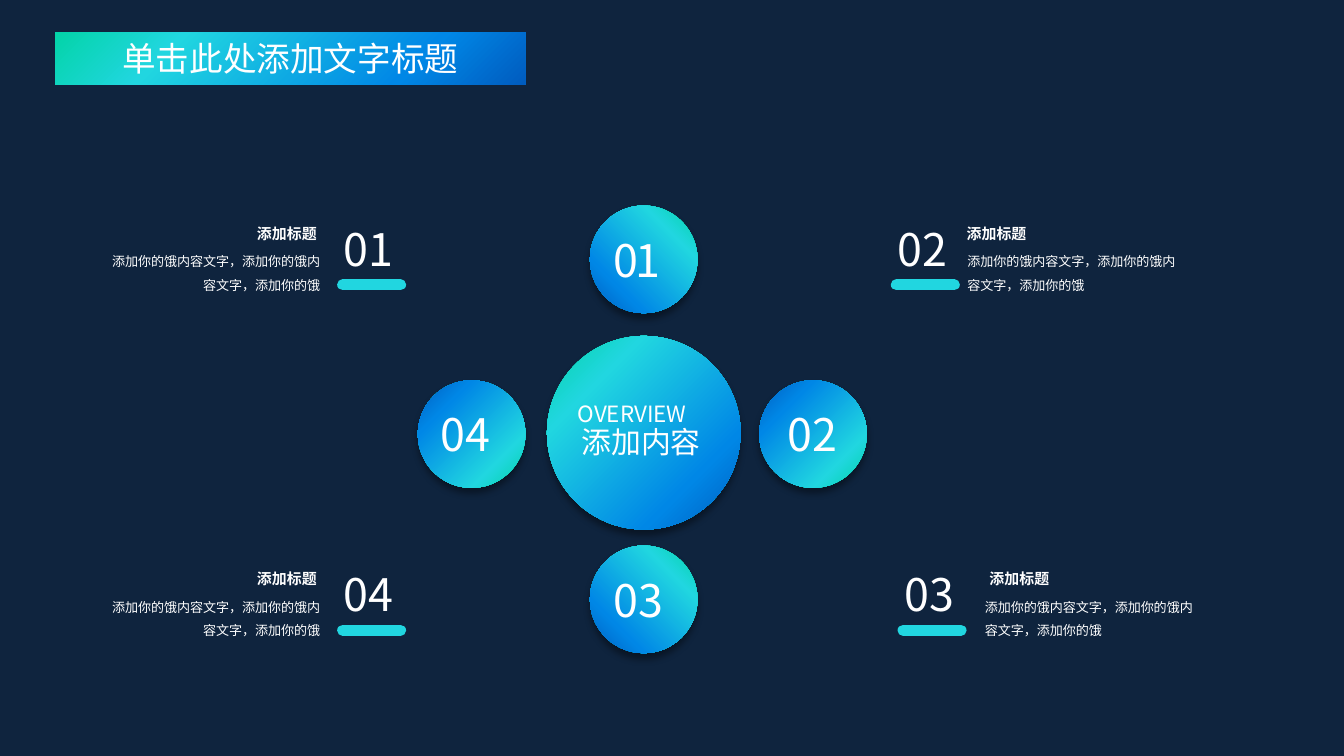
from lxml import etree
from pptx import Presentation
from pptx.dml.color import RGBColor
from pptx.enum.shapes import MSO_CONNECTOR, MSO_SHAPE
from pptx.enum.text import MSO_ANCHOR, MSO_AUTO_SIZE, PP_ALIGN
from pptx.oxml.ns import qn
from pptx.util import Inches, Pt

COLORS = {
    "background": "0F243E",
    "text": "FFFFFF",
    "green": "03D4A8",
    "cyan": "21D6E0",
    "blue": "0087E6",
    "deep": "005CBF",
    "shadow": "000000",
}
STOPS = [(0, "green"), (25, "cyan"), (75, "blue"), (100, "deep")]
FONT = "Noto Sans CJK SC"
HEADING = "添加标题"
BODY = "添加你的饿内容文字，添加你的饿内容文字，添加你的饿"


def rgb(name):
    return RGBColor.from_string(COLORS[name])


def child(parent, tag, **attrs):
    return etree.SubElement(parent, qn(tag), {k: str(v) for k, v in attrs.items()})


def color_node(parent, name):
    return child(parent, "a:srgbClr", val=COLORS[name])


def fill_gradient(sp):
    sp.fill.gradient()
    grad = sp._element.spPr.find(qn("a:gradFill"))
    for node in list(grad):
        grad.remove(node)
    grad.set("rotWithShape", "1")
    stops = child(grad, "a:gsLst")
    for pos, name in STOPS:
        color_node(child(stops, "a:gs", pos=pos * 1000), name)
    child(grad, "a:lin", ang=45 * 60000, scaled=0)
    sp.line.fill.background()


def style_run(p, size, font=FONT, bold=False, spacing=None):
    r = p.runs[0]
    r.font.size = Pt(size)
    r.font.bold = bold
    r.font.color.rgb = rgb("text")
    r.font.name = font
    rpr = r._r.get_or_add_rPr()
    child(rpr, "a:ea", typeface=font)
    if spacing is not None:
        rpr.set("spc", str(int(spacing * 100)))


def add_text(s, box, text, size, align=PP_ALIGN.LEFT, wrap=True, leading=None, **style):
    tf = s.shapes.add_textbox(*map(Inches, box)).text_frame
    tf.word_wrap = wrap
    tf.auto_size = MSO_AUTO_SIZE.SHAPE_TO_FIT_TEXT
    tf.text = text
    p = tf.paragraphs[0]
    p.alignment = align
    if leading:
        p.line_spacing = leading
    style_run(p, size, **style)


def add_title(s, box):
    sp = s.shapes.title
    sp.left, sp.top, sp.width, sp.height = map(Inches, box)
    geom = child(sp._element.spPr, "a:prstGeom", prst="roundRect")
    child(child(geom, "a:avLst"), "a:gd", name="adj", fmla="val 46800")
    fill_gradient(sp)
    tf = sp.text_frame
    tf.text = "单击此处添加文字标题"
    tf.vertical_anchor = MSO_ANCHOR.MIDDLE
    p = tf.paragraphs[0]
    p.alignment = PP_ALIGN.CENTER
    style_run(p, 18)


def add_circle(s, left, top, size, flip=False, rotation=0):
    sp = s.shapes.add_shape(MSO_SHAPE.OVAL, *map(Inches, (left, top, size, size)))
    fill_gradient(sp)
    sp.rotation = rotation
    if flip:
        sp._element.spPr.find(qn("a:xfrm")).set("flipH", "1")
    sp.shadow.inherit = False
    effects = sp._element.spPr.find(qn("a:effectLst"))
    shadow = child(effects, "a:outerShdw", blurRad=Pt(4), dist=Pt(3),
                   dir=90 * 60000, algn="t", rotWithShape=0)
    child(color_node(shadow, "shadow"), "a:alpha", val=40000)


def add_hub(s, left, top):
    add_circle(s, left, top, 1.44)
    add_text(s, (left + 0.16, top + 0.6, 1.25, 0.37), "添加内容", 16)
    add_text(s, (left + 0.13, top + 0.43, 1.31, 0.3), "OVERVIEW", 12)


def add_satellite(s, left, top, number, indent, rotation=0, spacing=None):
    add_circle(s, left, top, 0.8, flip=True, rotation=rotation)
    add_text(s, (left + indent, top + 0.15, 0.76, 0.5), number, 24, spacing=spacing)


def add_item(s, left, top, number, body_dx, heading_dx, align):
    y = Inches(top + 0.52)
    bar = s.shapes.add_connector(MSO_CONNECTOR.STRAIGHT, Inches(left + 0.09), y,
                                 Inches(left + 0.52), y)
    bar.line.color.rgb = rgb("cyan")
    bar.line.width = Pt(6)
    bar.line._get_or_add_ln().set("cap", "rnd")
    child(bar._element.spPr, "a:effectLst")
    add_text(s, (left, top, 0.62, 0.5), number, 24)
    add_text(s, (left + body_dx, top + 0.18, 1.8, 0.43), BODY, 7, align, leading=1.5)
    add_text(s, (left + heading_dx, top + 0.02, 0.65, 0.24), HEADING, 8,
             PP_ALIGN.CENTER, wrap=False, font="Lato", bold=True)


def main():
    prs = Presentation()
    prs.slide_width = Inches(10)
    prs.slide_height = prs.slide_width * 9 // 16
    s = prs.slides.add_slide(prs.slide_layouts[5])
    s.background.fill.solid()
    s.background.fill.fore_color.rgb = rgb("background")

    add_title(s, (0.41, 0.24, 3.5, 0.39))
    add_hub(s, 4.07, 2.5)
    add_satellite(s, 4.39, 1.53, "01", 0.08, spacing=-1.5)
    add_satellite(s, 4.39, 4.06, "03", 0.08)
    add_satellite(s, 5.65, 2.83, "02", 0.11, rotation=90)
    add_satellite(s, 3.11, 2.83, "04", 0.07, rotation=90)

    upper, lower = 1.6, 4.17
    add_item(s, 2.46, upper, "01", -1.78, -0.65, PP_ALIGN.RIGHT)
    add_item(s, 2.46, lower, "04", -1.78, -0.65, PP_ALIGN.RIGHT)
    add_item(s, 6.58, upper, "02", 0.52, 0.51, PP_ALIGN.LEFT)
    add_item(s, 6.63, lower, "03", 0.6, 0.63, PP_ALIGN.LEFT)
    prs.save("out.pptx")


if __name__ == "__main__":
    main()
